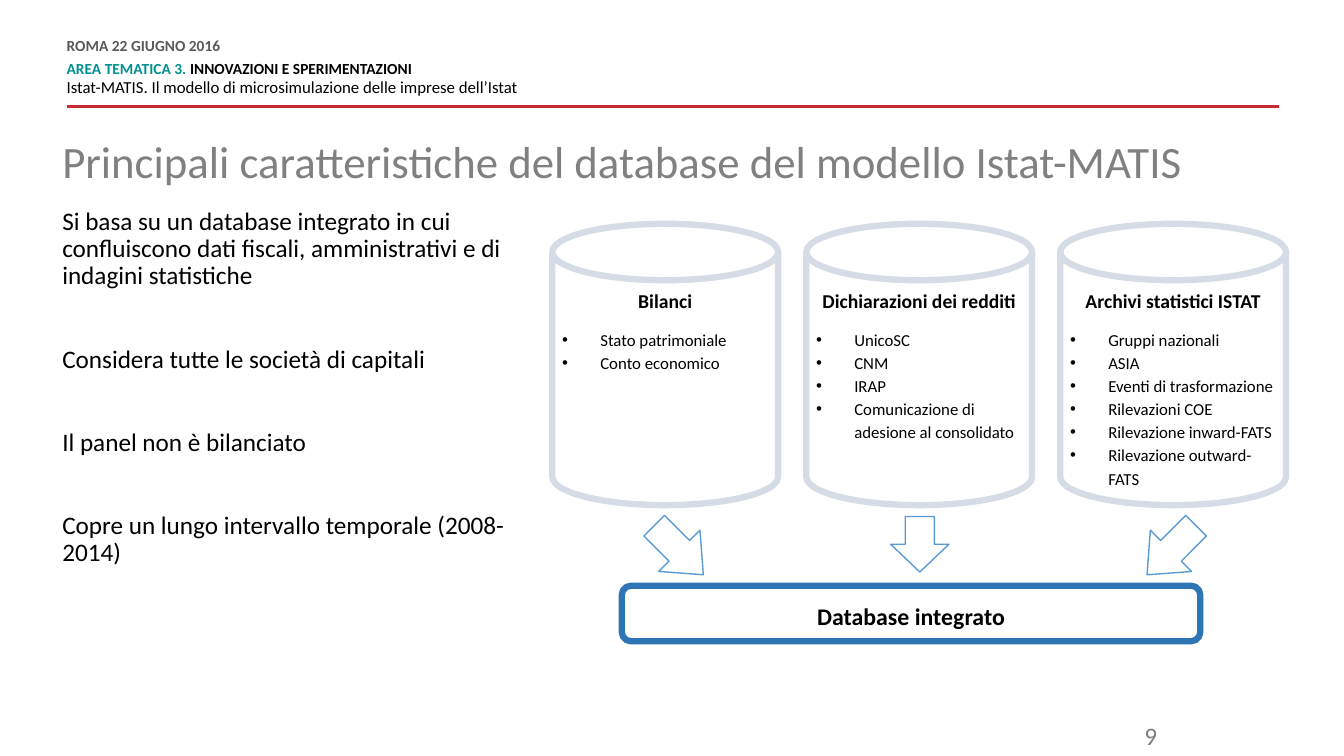
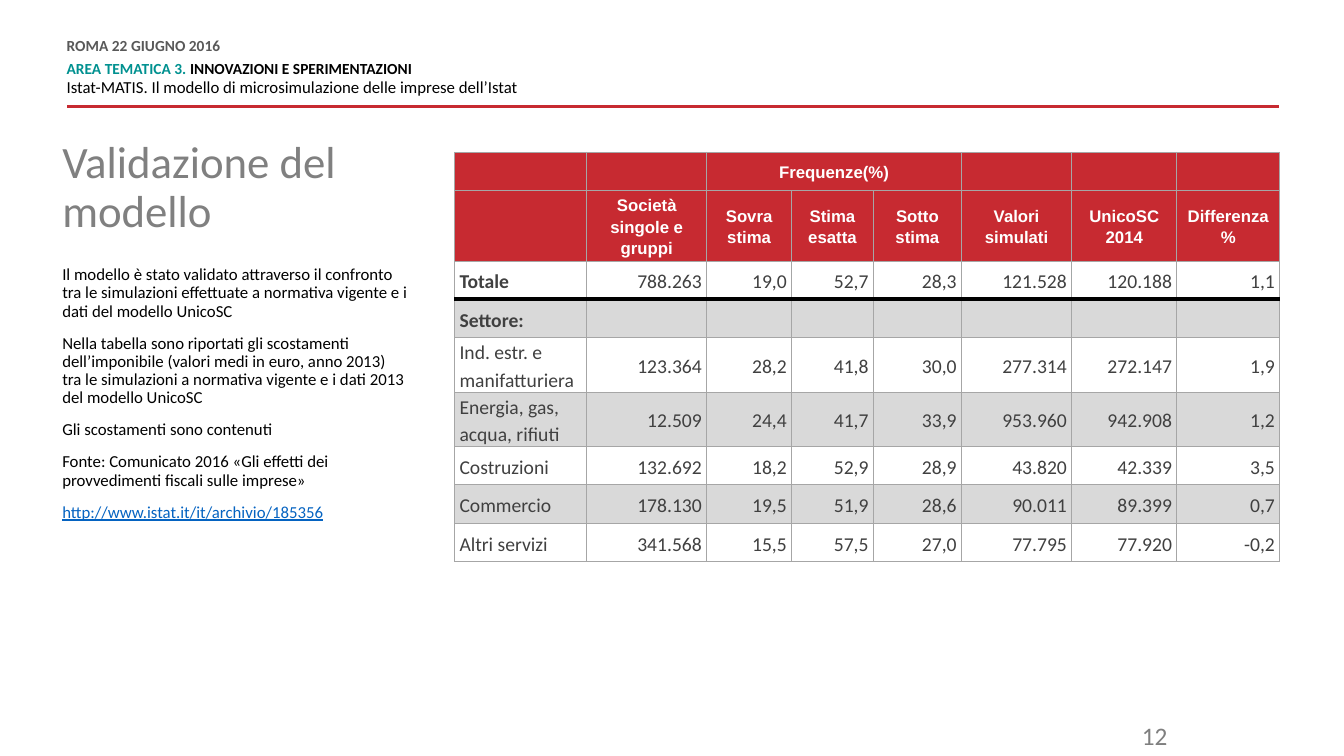
import lxml.etree
import pptx
import pptx.dml.color
import pptx.enum.shapes
import pptx.enum.text
import pptx.oxml.ns
import pptx.util

Cm, Pt = pptx.util.Cm, pptx.util.Pt
Hex = pptx.dml.color.RGBColor.from_string
Align = pptx.enum.text.PP_ALIGN
Shape = pptx.enum.shapes.MSO_SHAPE
Node, qn = lxml.etree.SubElement, pptx.oxml.ns.qn

tint = {
    "red": "C72A31", "teal": "009190", "dark": "595959", "title": "808080",
    "page": "7F7F7F", "black": "000000", "white": "FFFFFF", "band": "D9D9D9",
    "grid": "A6A6A6", "cell": "404040", "drum": "D6DCE5", "arrow": "5B9BD5",
    "base": "2E75B6", "link": "0563C1",
}


def add(frame, runs, size, align=Align.LEFT, line=0.9, before=0, after=0, face="Calibri"):
    """Add a paragraph of (text, colour, bold) runs, filling an empty first one."""
    para = frame.paragraphs[0]
    if para.runs:
        para = frame.add_paragraph()
        para.space_before = Pt(before)
    para.alignment, para.line_spacing, para.space_after = align, line, Pt(after)
    for text, color, bold in runs:
        run = para.add_run()
        run.text = text
        run.font.name, run.font.size, run.font.bold = face, Pt(size), bold
        run.font.color.rgb = Hex(tint[color])
    return para


def box(slide, x, y, w, h):
    """Return the frame of a wrapping text box without insets."""
    frame = slide.shapes.add_textbox(Cm(x), Cm(y), Cm(w), Cm(h)).text_frame
    frame.word_wrap = True
    frame.margin_left = frame.margin_right = frame.margin_top = frame.margin_bottom = 0
    return frame


deck = pptx.Presentation()
deck.slide_width, deck.slide_height = Cm(33.87), Cm(19.05)
left = 1.57

# Shared header, title and page number
pages = [
    ("Principali caratteristiche del database del modello Istat-MATIS", 30.45, 1.68, "9", 29.41),
    ("Validazione del modello", 9.96, 2.87, "12", 29.67),
]
for title, width, height, number, right in pages:
    slide = deck.slides.add_slide(deck.slide_layouts[6])
    rule = slide.shapes.add_connector(
        pptx.enum.shapes.MSO_CONNECTOR.STRAIGHT, Cm(32.23), Cm(2.69), Cm(1.68), Cm(2.69))
    rule.line.color.rgb, rule.line.width = Hex(tint["red"]), Pt(2)
    Node(rule._element.spPr, qn("a:effectLst"))

    head = box(slide, 1.68, 0.99, 21.18, 1.5)
    add(head, [("ROMA 22 GIUGNO 2016", "dark", True)], 11, line=Pt(10.8), after=6)
    add(head, [("AREA TEMATICA 3. ", "teal", True),
               ("INNOVAZIONI E SPERIMENTAZIONI", "black", True)], 11, line=Pt(10.8))
    add(head, [("Istat-MATIS. Il modello di microsimulazione delle imprese dell’Istat",
                "black", False)], 12, line=Pt(10.8), before=3)

    add(box(slide, left, 3.53, width, height), [(title, "title", False)], 32)
    foot = box(slide, right - 3, 18.14, 2.75, 0.89)
    add(foot, [(number, "page", False)], 18, Align.RIGHT, line=1)

first, second = deck.slides

# Database: claims on the left
claims = box(first, left, 5.26, 11.3, 11.86)
for claim in [
    "Si basa su un database integrato in cui confluiscono dati fiscali, "
    "amministrativi e di indagini statistiche",
    "Considera tutte le società di capitali",
    "Il panel non è bilanciato",
    "Copre un lungo intervallo temporale (2008-2014)",
]:
    add(claims, [(claim, "black", False)], 18, before=40)

# Database: three drums of sources
drums = [
    ("Bilanci", ["Stato patrimoniale", "Conto economico"]),
    ("Dichiarazioni dei redditi",
     ["UnicoSC", "CNM", "IRAP", "Comunicazione di adesione al consolidato"]),
    ("Archivi statistici ISTAT",
     ["Gruppi nazionali", "ASIA", "Eventi di trasformazione", "Rilevazioni COE",
      "Rilevazione inward-FATS", "Rilevazione outward-FATS"]),
]
parts = []
for col, (name, items) in enumerate(drums):
    drum = first.shapes.add_shape(
        Shape.CAN, Cm(13.92 + 6.4 * col), Cm(5.64), Cm(5.69), Cm(7.09))
    parts.append((drum, "drum", 4.5))
    frame = drum.text_frame
    frame.word_wrap = True
    frame.vertical_anchor = pptx.enum.text.MSO_ANCHOR.TOP
    add(frame, [(name, "black", True)], 14, Align.CENTER, 1.15, after=10)
    for item in items:
        props = add(frame, [(item, "black", False)], 12, line=1.15)._p.get_or_add_pPr()
        props.set("marL", str(Cm(0.96)))
        props.set("indent", str(-Cm(0.96)))
        Node(props, qn("a:buFont"), typeface="Arial")
        Node(props, qn("a:buChar"), char="•")

# Database: arrows into the merged base
for x, y, width, turn, tip in [
    (16.23, 13.13, 1.75, 45, 0.58),
    (22.48, 12.98, 1.4, 90, 0.5),
    (28.65, 13.13, 1.75, 135, 0.58),
]:
    arrow = first.shapes.add_shape(Shape.RIGHT_ARROW, Cm(x), Cm(y), Cm(width), Cm(1.47))
    arrow.rotation = turn
    arrow.adjustments[1] = tip
    parts.append((arrow, "arrow", 1))

base = first.shapes.add_shape(
    Shape.ROUNDED_RECTANGLE, Cm(15.67), Cm(14.76), Cm(14.58), Cm(1.4))
base.text_frame.vertical_anchor = pptx.enum.text.MSO_ANCHOR.MIDDLE
add(base.text_frame, [("Database integrato", "black", True)], 17, Align.CENTER, 1.15)
parts.append((base, "base", 4.5))

for part, color, weight in parts:
    part.shadow.inherit = False
    part.fill.solid()
    part.fill.fore_color.rgb = Hex(tint["white"])
    part.line.color.rgb, part.line.width = Hex(tint[color]), Pt(weight)

# Validation: notes on the left
notes = box(second, left, 6.71, 8.71, 6.76)
for note in [
    "Il modello è stato validato attraverso il confronto tra le simulazioni "
    "effettuate a normativa vigente e i dati del modello UnicoSC",
    "Nella tabella sono riportati gli scostamenti dell’imponibile (valori medi in "
    "euro, anno 2013) tra le simulazioni a normativa vigente e i dati 2013 del modello UnicoSC",
    "Gli scostamenti sono contenuti",
    "Fonte: Comunicato 2016 «Gli effetti dei provvedimenti fiscali sulle imprese»",
]:
    add(notes, [(note, "black", False)], 12, before=10)
link = add(notes, [("http://www.istat.it/it/archivio/185356", "link", False)], 12, before=10)
link.runs[0].font.underline = True

# Validation: table of deviations
rows = [
    ["", "", "Frequenze(%)", "", "", "", "", ""],
    ["", "Società singole e gruppi", "Sovra stima", "Stima esatta", "Sotto stima",
     "Valori\nsimulati", "UnicoSC\n2014", "Differenza\n%"],
    ["Totale", "788.263", "19,0", "52,7", "28,3", "121.528", "120.188", "1,1"],
    ["Settore:", "", "", "", "", "", "", ""],
    ["Ind. estr. e manifatturiera", "123.364", "28,2", "41,8", "30,0",
     "277.314", "272.147", "1,9"],
    ["Energia, gas, acqua, rifiuti", "12.509", "24,4", "41,7", "33,9",
     "953.960", "942.908", "1,2"],
    ["Costruzioni", "132.692", "18,2", "52,9", "28,9", "43.820", "42.339", "3,5"],
    ["Commercio", "178.130", "19,5", "51,9", "28,6", "90.011", "89.399", "0,7"],
    ["Altri servizi", "341.568", "15,5", "57,5", "27,0", "77.795", "77.920", "-0,2"],
]
wide = [3.33, 3.02, 2.14, 2.06, 2.22, 2.78, 2.65, 2.59]
tall = [0.96, 1.78, 0.96, 0.97, 1.37, 1.37, 0.97, 0.97, 0.97]
heads, total = 2, 2

table = second.shapes.add_table(
    len(rows), len(wide), Cm(11.46), Cm(3.84), Cm(sum(wide)), Cm(sum(tall))).table
table.first_row = table.horz_banding = False
for col, width in zip(table.columns, wide):
    col.width = Cm(width)
for row, height in zip(table.rows, tall):
    row.height = Cm(height)
table.cell(0, 2).merge(table.cell(0, 4))

for r, row in enumerate(rows):
    for c, text in enumerate(row):
        cell = table.cell(r, c)
        cell.margin_left = cell.margin_right = Cm(0.12)
        cell.margin_top = cell.margin_bottom = 0
        cell.vertical_anchor = pptx.enum.text.MSO_ANCHOR.MIDDLE
        for side in "LRTB":
            thick = (r, side) in [(total, "B"), (total + 1, "T")]
            edge = Node(cell._tc.get_or_add_tcPr(), qn("a:ln" + side),
                        w=str(Pt(3 if thick else 0.75)))
            fill = Node(edge, qn("a:solidFill"))
            Node(fill, qn("a:srgbClr"), val=tint["black" if thick else "grid"])
        cell.fill.solid()
        shade = "red" if r < heads else "band" if r % 2 else "white"
        cell.fill.fore_color.rgb = Hex(tint[shade])
        if not text:
            continue
        if r < heads:
            for line in text.split("\n"):
                add(cell.text_frame, [(line, "white", True)], 12, Align.CENTER, 1.15,
                    face="Arial")
        else:
            bold = c == 0 and r <= total + 1
            add(cell.text_frame, [(text, "cell", bold)], 14,
                Align.RIGHT if c else Align.LEFT, 1.15)

deck.save("out.pptx")
